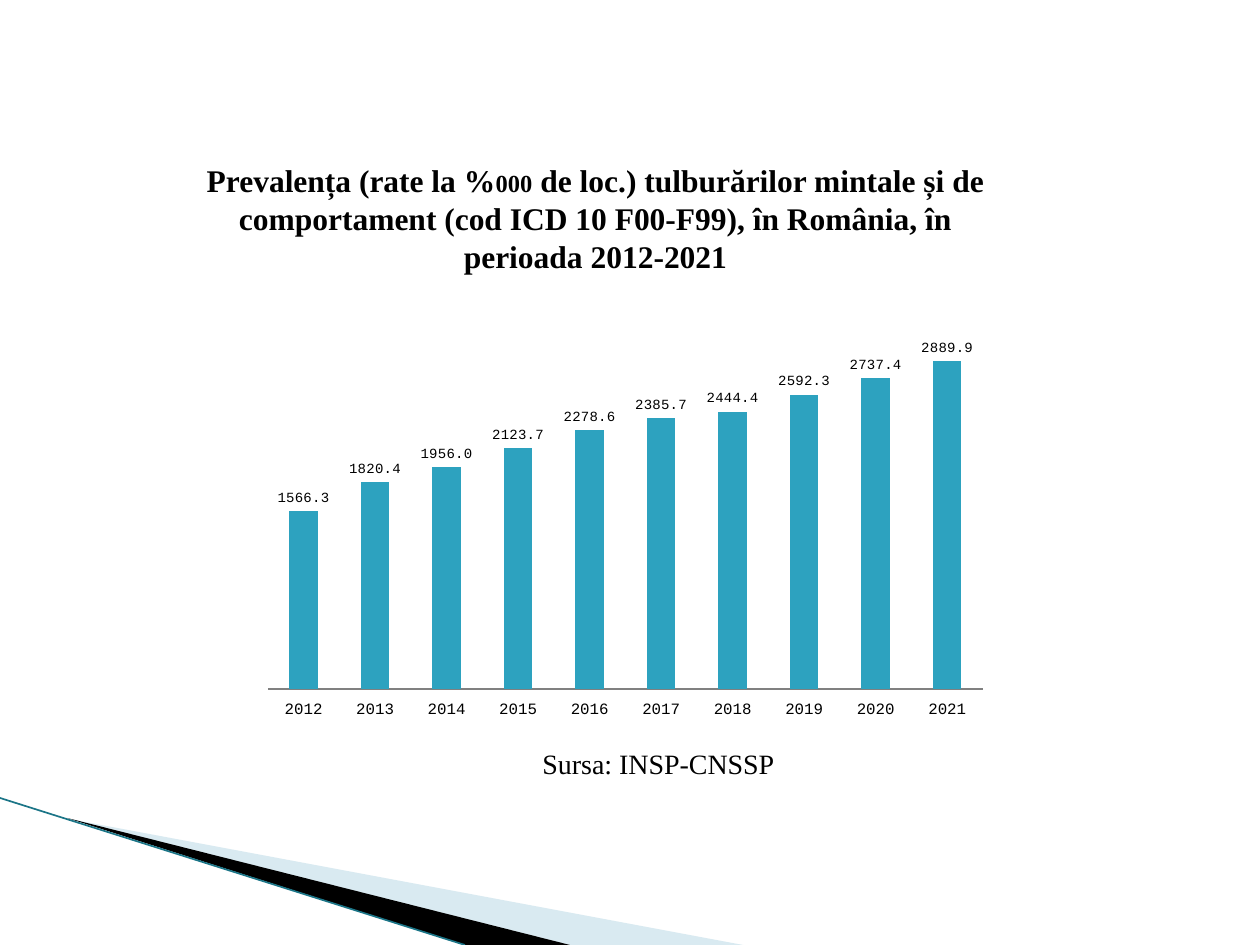
from dataclasses import dataclass

from lxml.etree import SubElement
from pptx import Presentation
from pptx.chart.data import CategoryChartData
from pptx.dml.color import RGBColor
from pptx.enum.chart import XL_CHART_TYPE, XL_LABEL_POSITION, XL_TICK_LABEL_POSITION, XL_TICK_MARK
from pptx.enum.shapes import MSO_CONNECTOR
from pptx.enum.text import PP_ALIGN
from pptx.oxml import parse_xml
from pptx.oxml.ns import nsdecls, qn
from pptx.util import Emu, Pt

EMU_PER_PX = 914400 / 126


@dataclass(frozen=True)
class Theme:
    """Colours, fonts and type sizes of the slide."""
    ink: RGBColor = RGBColor(0, 0, 0)
    bar: RGBColor = RGBColor(0x2D, 0xA2, 0xBF)
    axis: RGBColor = RGBColor(0x80, 0x80, 0x80)
    pale: RGBColor = RGBColor(0xA0, 0xCB, 0xDC)
    edge: RGBColor = RGBColor(0x1B, 0x75, 0x87)
    serif: str = "Times New Roman"
    mono: str = "Courier New"
    title: Pt = Pt(18)
    subscript: Pt = Pt(14)
    source: Pt = Pt(16)
    chart: Pt = Pt(10)
    category: Pt = Pt(9)
    label: Pt = Pt(8)


THEME = Theme()
RATES = {
    "2012": 1566.3, "2013": 1820.4, "2014": 1956.0, "2015": 2123.7, "2016": 2278.6,
    "2017": 2385.7, "2018": 2444.4, "2019": 2592.3, "2020": 2737.4, "2021": 2889.9,
}


def px(*lengths):
    """Turn pixel lengths into a list of EMU."""
    return [Emu(round(length * EMU_PER_PX)) for length in lengths]


def add_wedge(page, points, color, opacity=100):
    """Draw a filled triangle without an outline."""
    builder = page.shapes.build_freeform(*points[0], scale=EMU_PER_PX)
    builder.add_line_segments(points[1:], close=True)
    wedge = builder.convert_to_shape()
    wedge.shadow.inherit = False
    wedge.fill.solid()
    wedge.fill.fore_color.rgb = color
    wedge.line.fill.background()
    if opacity < 100:
        tint = wedge.fill._xPr.find(qn("a:solidFill"))[0]
        SubElement(tint, qn("a:alpha")).set("val", str(opacity * 1000))


def add_edge(page, start, end):
    """Draw the thin line along the wedges."""
    edge = page.shapes.add_connector(MSO_CONNECTOR.STRAIGHT, *px(*start, *end))
    edge.line.color.rgb = THEME.edge
    edge.line.width = Pt(0.95)
    SubElement(edge._element.spPr, qn("a:effectLst"))


def add_text(page, frame, spans, size, bold=False, align=PP_ALIGN.LEFT, wrap=True):
    """Place one paragraph whose spans are pairs of text and own size."""
    box = page.shapes.add_textbox(*px(*frame))
    box.text_frame.word_wrap = wrap
    para = box.text_frame.paragraphs[0]
    para.alignment = align
    para.font.name = THEME.serif
    para.font.size = size
    para.font.bold = bold
    para.font.color.rgb = THEME.ink
    for text, own_size in spans:
        span = para.add_run()
        span.text = text
        if own_size:
            span.font.size = own_size


def fix_plot_area(chart, x, y, width, height):
    """Set the inner plot area as fractions of the chart."""
    sizes = "".join(
        f'<c:{name} val="{value}"/>'
        for name, value in (("x", x), ("y", y), ("w", width), ("h", height))
    )
    layout = parse_xml(
        f'<c:layout {nsdecls("c")}><c:manualLayout><c:layoutTarget val="inner"/>'
        f'<c:xMode val="edge"/><c:yMode val="edge"/>{sizes}</c:manualLayout></c:layout>'
    )
    plot_area = chart._chartSpace.chart.plotArea
    for old in plot_area.findall(qn("c:layout")):
        plot_area.remove(old)
    plot_area.insert(0, layout)


def add_rate_chart(page, frame):
    """Add the column chart of yearly rates."""
    data = CategoryChartData(number_format="0.0")
    data.categories = list(RATES)
    data.add_series("Series 1", list(RATES.values()))
    chart = page.shapes.add_chart(XL_CHART_TYPE.COLUMN_CLUSTERED, *px(*frame), data).chart
    chart.has_legend = False
    chart.has_title = False
    chart.font.name = THEME.mono
    chart.font.size = THEME.chart
    chart.font.color.rgb = THEME.ink

    years = chart.category_axis
    years.major_tick_mark = XL_TICK_MARK.NONE
    years.tick_label_position = XL_TICK_LABEL_POSITION.LOW
    years.tick_labels.font.size = THEME.category
    years.format.line.color.rgb = THEME.axis
    rates = chart.value_axis
    rates.minimum_scale, rates.maximum_scale = 0, 3500
    rates.has_major_gridlines = False
    rates.visible = False

    plot = chart.plots[0]
    plot.gap_width = 150
    plot.vary_by_categories = False
    bars = plot.series[0]
    bars.format.fill.solid()
    bars.format.fill.fore_color.rgb = THEME.bar
    labels = bars.data_labels
    labels.show_value = True
    labels.number_format = "0.0"
    labels.number_format_is_linked = False
    labels.position = XL_LABEL_POSITION.OUTSIDE_END
    labels.font.size = THEME.label
    fix_plot_area(chart, 0.02, 0.02, 0.96, 0.91)


def main():
    """Build the slide and save it."""
    deck = Presentation()
    deck.slide_width, deck.slide_height = px(1260, 945)
    page = deck.slides.add_slide(deck.slide_layouts[6])
    add_wedge(page, [(69, 819), (743, 945), (570, 945)], THEME.pale, opacity=40)
    add_wedge(page, [(67, 818), (570, 945), (465, 945)], THEME.ink)
    add_edge(page, (0, 798), (465, 945))
    title = [
        ("Prevalența (rate la %", None),
        ("000", THEME.subscript),
        (" de loc.) tulburărilor mintale și de comportament (cod ICD 10 F00-F99), "
         "în România, în perioada 2012-2021", None),
    ]
    add_text(page, (174, 155, 843, 127), title, THEME.title, bold=True, align=PP_ALIGN.CENTER)
    add_text(page, (530, 740, 261, 45), [("Sursa: INSP-CNSSP", None)], THEME.source, wrap=False)
    add_rate_chart(page, (253, 283, 745, 437))
    deck.save("out.pptx")


if __name__ == "__main__":
    main()
